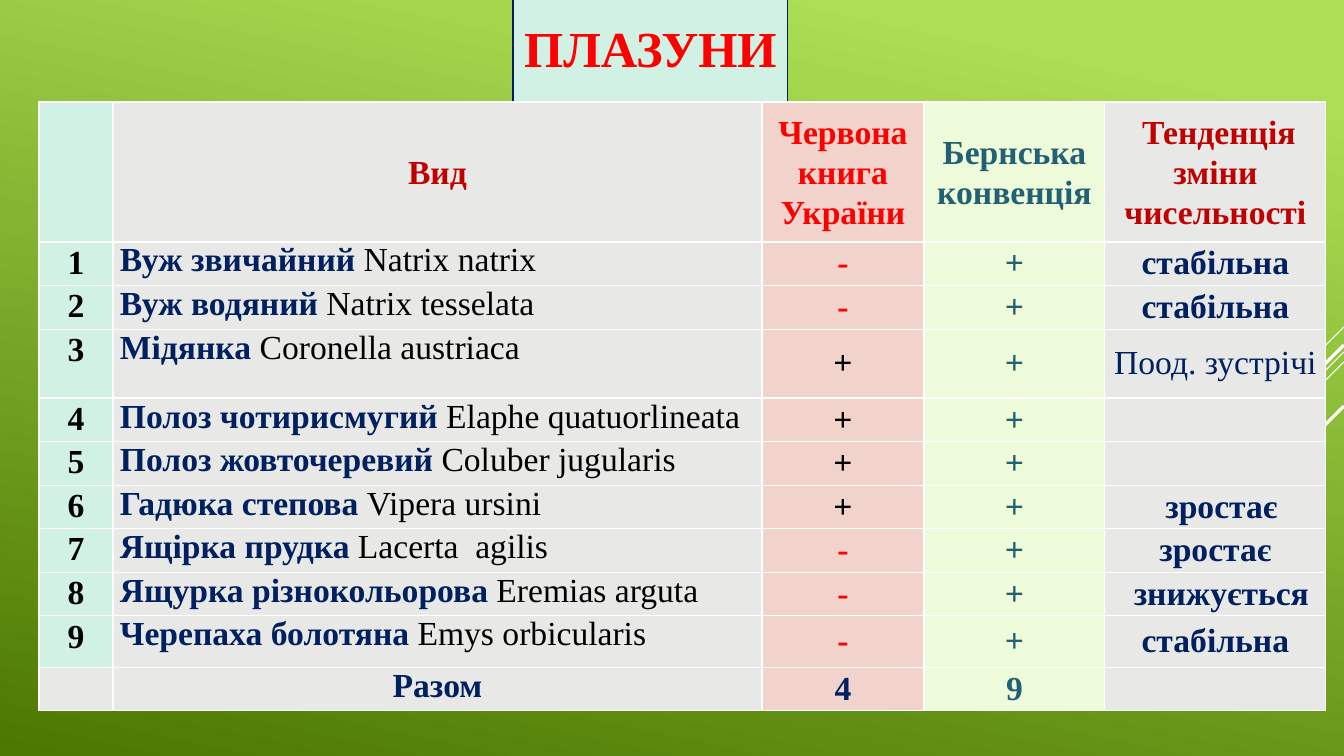
from lxml.etree import SubElement
from pptx import Presentation
from pptx.dml.color import RGBColor
from pptx.enum.shapes import MSO_CONNECTOR as Connector
from pptx.enum.text import MSO_ANCHOR as Anchor, MSO_AUTO_SIZE as AutoSize, PP_ALIGN as Align
from pptx.oxml import parse_xml
from pptx.oxml.ns import nsdecls, qn
from pptx.util import Pt

TITLE = "ПЛАЗУНИ"
HEADINGS = ["", "Вид", "Червона книга України", "Бернська конвенція",
            "Тенденція зміни чисельності"]
# Ukrainian name, Latin name, Red Book, Bern Convention, trend
SPECIES = [
    ("Вуж звичайний", "Natrix natrix", "-", "+", "стабільна"),
    ("Вуж водяний", "Natrix tesselata", "-", "+", "стабільна"),
    ("Мідянка", "Coronella austriaca", "+", "+", "Поод. зустрічі"),
    ("Полоз чотирисмугий", "Elaphe quatuorlineata", "+", "+", ""),
    ("Полоз жовточеревий", "Coluber jugularis", "+", "+", ""),
    ("Гадюка степова", "Vipera ursini", "+", "+", "зростає"),
    ("Ящірка прудка", "Lacerta  agilis", "-", "+", "зростає"),
    ("Ящурка різнокольорова", "Eremias arguta", "-", "+", "знижується"),
    ("Черепаха болотяна", "Emys orbicularis", "-", "+", "стабільна"),
]
TOTALS = ["", "Разом", "4", "9", ""]

NAVY, RED, DARK_RED, TEAL, BLACK, WHITE = "002060", "FF0000", "C00000", "236073", "000000", "FFFFFF"
MINT, GREY, PINK, LIME = "D1F1E4", "E8E9E7", "F2D3CC", "EEFBDA"
COLUMN_FILLS = [MINT, GREY, PINK, LIME, GREY]
HEADING_COLOURS = [BLACK, DARK_RED, RED, TEAL, DARK_RED]
TOTAL_COLOURS = [BLACK, NAVY, NAVY, TEAL, NAVY]

# Lengths in px
SLIDE = (1344, 756)
TITLE_BOX = (513, 12, 275, 71)
TABLE_CORNER = (39, 102)
COLUMN_WIDTHS = [74, 649, 162, 181, 221]
ROW_HEIGHTS = [140, 43, 44, 69, 43, 44, 43, 44, 43, 52, 43]
HEADING_INDENT, TREND_INDENT = 7, 12
INDENTED_TRENDS = {6, 8}
# Diagonal rays from the right edge: start y, horizontal run, width in points
RAYS = [(327, 101, 0.75), (352, 329, 0.75), (362, 209, 0.75), (345, 193, 2.25), (406, 140, 2.25)]


def px(length):
    return round(length * 914400 / 100.8)


def colour(value):
    return RGBColor.from_string(value)


def write(frame, runs, size=24, align=Align.CENTER, spacing=None, indent=0):
    """Write (text, colour, bold) runs into the first paragraph."""
    paragraph = frame.paragraphs[0]
    paragraph.alignment = align
    if spacing:
        paragraph.line_spacing = spacing
    if indent:
        properties = paragraph._p.get_or_add_pPr()
        properties.set("marL", "0")
        properties.set("indent", str(px(indent)))
    for text, tint, bold in runs:
        run = paragraph.add_run()
        run.text = text
        run.font.name = "Times New Roman"
        run.font.size = Pt(size)
        run.font.bold = bold
        run.font.color.rgb = colour(tint)


def fill_cell(cell, fill, runs, anchor=Anchor.MIDDLE, **text_format):
    cell.fill.solid()
    cell.fill.fore_color.rgb = colour(fill)
    for position, side in enumerate(("lnL", "lnR", "lnT", "lnB")):
        border = parse_xml(
            f'<a:{side} {nsdecls("a")} w="12700"><a:solidFill>'
            f'<a:srgbClr val="{WHITE}"/></a:solidFill></a:{side}>')
        cell._tc.tcPr.insert(position, border)
    if runs:
        cell.margin_left = cell.margin_right = px(7)
        cell.margin_top = cell.margin_bottom = 0
        cell.vertical_anchor = anchor
        write(cell.text_frame, runs, **text_format)


presentation = Presentation()
presentation.slide_width, presentation.slide_height = map(px, SLIDE)
slide = presentation.slides.add_slide(presentation.slide_layouts[5])

# Background
backdrop = slide.background.fill
backdrop.gradient()
backdrop.gradient_angle = 258
for stop, (position, tint) in zip(backdrop.gradient_stops, [(0.1, "ACDF55"), (1, "4C7800")]):
    stop.position = position
    stop.color.rgb = colour(tint)

# Diagonal rays
for top, run_length, width in RAYS:
    ray = slide.shapes.add_connector(
        Connector.STRAIGHT, px(SLIDE[0]), px(top), px(SLIDE[0] - run_length), px(top + run_length))
    ray.line.color.rgb = colour(WHITE)
    ray.line.width = Pt(width)
    SubElement(ray._element.spPr, qn("a:effectLst"))

# Title
title = slide.shapes.title
title.left, title.top, title.width, title.height = map(px, TITLE_BOX)
title.fill.solid()
title.fill.fore_color.rgb = colour(MINT)
title.line.color.rgb = colour(NAVY)
title.line.width = Pt(0.75)
title.text_frame.word_wrap = False
title.text_frame.auto_size = AutoSize.SHAPE_TO_FIT_TEXT
write(title.text_frame, [(TITLE, RED, True)], size=36)

# Table grid
table = slide.shapes.add_table(
    len(ROW_HEIGHTS), len(COLUMN_WIDTHS), *map(px, TABLE_CORNER),
    px(sum(COLUMN_WIDTHS)), px(sum(ROW_HEIGHTS))).table
table.first_row = table.horz_banding = False
for column, width in zip(table.columns, COLUMN_WIDTHS):
    column.width = px(width)
for row, height in zip(table.rows, ROW_HEIGHTS):
    row.height = px(height)

# Heading row
for index, (heading, tint, fill) in enumerate(zip(HEADINGS, HEADING_COLOURS, COLUMN_FILLS)):
    fill_cell(table.cell(0, index), fill, [(heading, tint, True)] if heading else [],
              spacing=1.07, indent=HEADING_INDENT if index == 4 else 0)

# Species rows
for number, (name, latin, red_book, bern, trend) in enumerate(SPECIES, 1):
    number_cell, name_cell, red_cell, bern_cell, trend_cell = table.rows[number].cells
    fill_cell(number_cell, MINT, [(str(number), BLACK, True)], anchor=Anchor.TOP, spacing=1.07)
    fill_cell(name_cell, GREY, [(name + " ", NAVY, True), (latin, BLACK, False)],
              anchor=Anchor.TOP, align=Align.LEFT)
    fill_cell(red_cell, PINK, [(red_book, RED if red_book == "-" else BLACK, True)])
    fill_cell(bern_cell, LIME, [(bern, TEAL, True)])
    fill_cell(trend_cell, GREY, [(trend, NAVY, number != 3)] if trend else [],
              indent=TREND_INDENT if number in INDENTED_TRENDS else 0)

# Totals row
for index, (total, tint, fill) in enumerate(zip(TOTALS, TOTAL_COLOURS, [GREY] + COLUMN_FILLS[1:])):
    fill_cell(table.cell(len(SPECIES) + 1, index), fill, [(total, tint, True)] if total else [],
              anchor=Anchor.TOP if index == 1 else Anchor.MIDDLE)

presentation.save("out.pptx")
